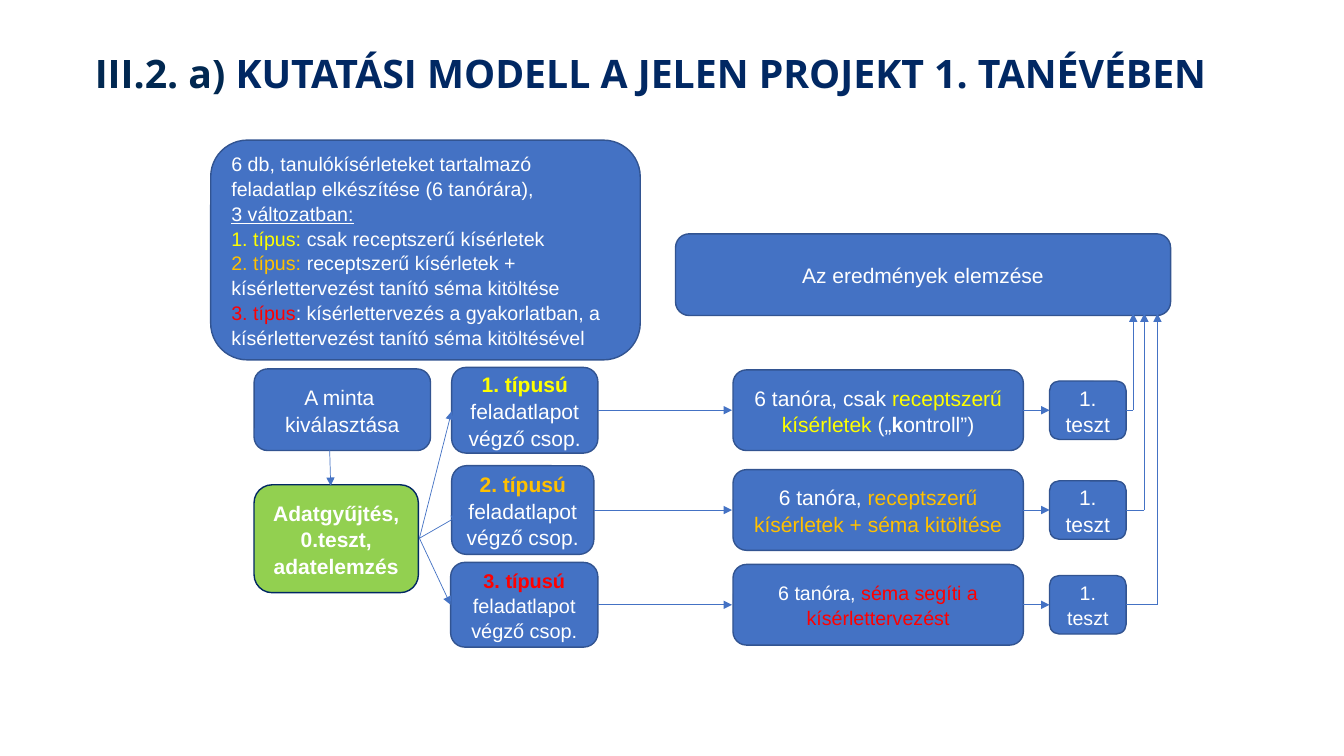
"""Builds a slide showing the research model as a flow of three groups."""
from lxml.etree import SubElement
from pptx import Presentation
from pptx.dml.color import RGBColor
from pptx.enum.shapes import MSO_CONNECTOR, MSO_SHAPE
from pptx.enum.text import MSO_ANCHOR, PP_ALIGN
from pptx.oxml.ns import qn
from pptx.util import Inches, Pt

HUES = {
    "blue": "4472C4", "edge": "325491", "green": "92D050", "navy": "012863",
    "dark": "012851", "white": "FFFFFF", "yellow": "FFFF00",
    "orange": "FFC000", "red": "FF0000",
}


class Board:
    """Holds the style and the slide being drawn."""

    face = "Arial"
    space = 1.06

    def __init__(self, slide):
        self.slide = slide

    def hue(self, name):
        return RGBColor.from_string(HUES[name])

    def text(self, frame, paras, size, align, bold=False, face=face):
        frame.word_wrap = True
        for i, runs in enumerate(paras):
            para = frame.paragraphs[0] if i == 0 else frame.add_paragraph()
            para.alignment = align
            para.font.name = face
            para.font.size = Pt(size)
            para.font.bold = bold
            for words, color, *marks in runs:
                run = para.add_run()
                run.text = words
                run.font.color.rgb = self.hue(color)
                if "bold" in marks:
                    run.font.bold = True
                if "under" in marks:
                    run.font.underline = True

    def title(self, box, runs):
        shape = self.slide.shapes.add_textbox(*map(Inches, box))
        self.text(shape.text_frame, [runs], 28, PP_ALIGN.CENTER, True, "Open Sans")

    def box(self, box, paras, size=15, align=PP_ALIGN.CENTER, bold=False,
            fill="blue", edge="edge"):
        shape = self.slide.shapes.add_shape(
            MSO_SHAPE.ROUNDED_RECTANGLE, *map(Inches, box))
        shape.shadow.inherit = False
        shape.fill.solid()
        shape.fill.fore_color.rgb = self.hue(fill)
        shape.line.color.rgb = self.hue(edge)
        shape.line.width = Pt(1)
        frame = shape.text_frame
        frame.vertical_anchor = MSO_ANCHOR.MIDDLE
        self.text(frame, paras, size, align, bold)
        for para in frame.paragraphs:
            para.line_spacing = self.space

    def line(self, start, end, arrow=True):
        link = self.slide.shapes.add_connector(
            MSO_CONNECTOR.STRAIGHT, *map(Inches, (*start, *end)))
        link.line.color.rgb = self.hue("blue")
        link.line.width = Pt(0.5)
        props = link.element.spPr
        if arrow:
            SubElement(props.find(qn("a:ln")), qn("a:tailEnd"), type="triangle")
        SubElement(props, qn("a:effectLst"))


LANES = [
    (4.07, "yellow", (4.48, 1.45, 0.85), 15, 15, 11.24, (4.48, 4.08),
     [("6 tanóra, csak", "white"), (" receptszerű kísérletek ", "yellow"),
      ("(„", "white"), ("k", "white", "bold"), ("ontroll”)", "white")]),
    (5.06, "orange", (4.48, 1.41, 0.88), 15, 15, 11.35, (4.56, 5.11),
     [("6 tanóra, ", "white"),
      ("receptszerű kísérletek + séma kitöltése", "orange")]),
    (6.0, "red", (4.47, 1.46, 0.84), 14.2, 14, 11.48, (4.47, 6.0),
     [("6 tanóra,", "white"), (" séma segíti a kísérlettervezést", "red")]),
]


def main():
    deck = Presentation()
    deck.slide_width, deck.slide_height = Inches(13.33), Inches(7.5)
    board = Board(deck.slides.add_slide(deck.slide_layouts[6]))

    board.title((0.35, 0.44, 12.2, 0.57), [
        ("III.2. a) ", "dark"),
        ("KUTATÁSI MODELL A JELEN PROJEKT 1. TANÉVÉBEN", "navy")])
    board.box((2.09, 1.39, 4.26, 2.18), [
        [("6 db, tanulókísérleteket tartalmazó feladatlap elkészítése "
          "(6 tanórára),", "white")],
        [("3 változatban:", "white", "under")],
        [("1. típus: ", "yellow"), ("csak receptszerű kísérletek", "white")],
        [("2. típus: ", "orange"),
         ("receptszerű kísérletek + kísérlettervezést tanító séma kitöltése",
          "white")],
        [("3. típus", "red"),
         (": kísérlettervezés a gyakorlatban, a kísérlettervezést tanító "
          "séma kitöltésével", "white")],
    ], 14, PP_ALIGN.LEFT)
    board.box((2.52, 3.66, 1.75, 0.81),
              [[("A minta ", "white")], [("kiválasztása", "white")]])
    board.box((2.52, 4.81, 1.63, 1.07),
              [[("Adatgyűjtés, 0.teszt, adatelemzés", "white")]],
              bold=True, fill="green", edge="navy")
    board.box((6.7, 2.32, 4.91, 0.81), [[("Az eredmények elemzése", "white")]])
    board.line((3.27, 4.46), (3.28, 4.82))

    for i, lane in enumerate(LANES, 1):
        mid, color, (left, wide, high), size, small, rise, goal, task = lane
        board.box((left, mid - high / 2, wide, high), [
            [(f"{i}. típusú ", color, "bold"),
             ("feladatlapot végző csop.", "white")]], size)
        board.box((7.27, mid - 0.4, 2.88, 0.8), [task], small)
        board.box((10.41, mid - 0.29, 0.76, 0.58), [[("1. teszt", "white")]], small)
        board.line((4.16, 5.34), goal)
        board.line((left + wide, mid), (7.26, mid))
        board.line((10.15, mid), (10.41, mid))
        board.line((11.17, mid), (rise, mid), arrow=False)
        board.line((rise, mid), (rise, 3.11))

    deck.save("out.pptx")


if __name__ == "__main__":
    main()
